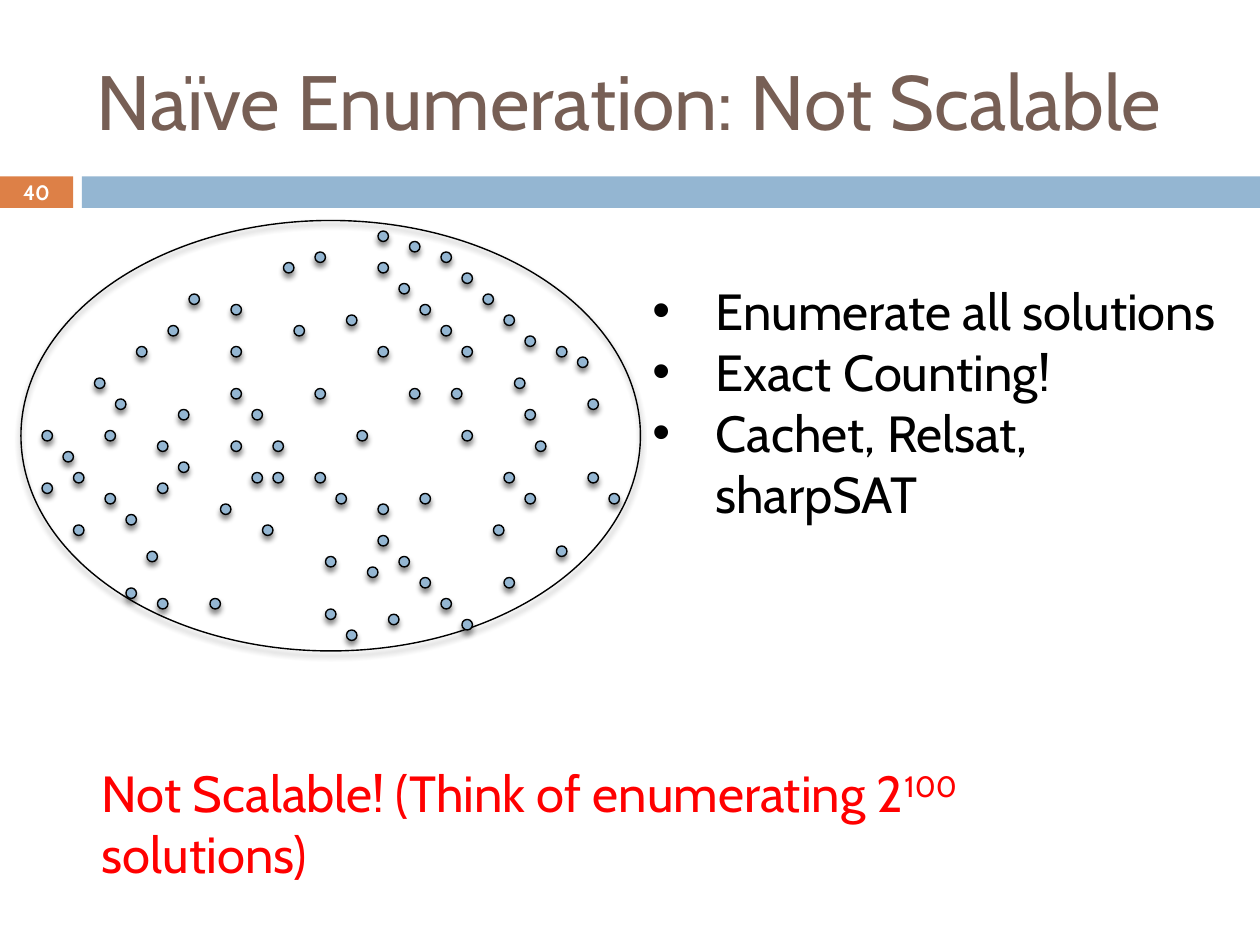
"""Build the slide on why naïve enumeration of solutions does not scale."""
from dataclasses import dataclass

from lxml.etree import SubElement
from pptx import Presentation
from pptx.dml.color import RGBColor
from pptx.enum.shapes import MSO_SHAPE
from pptx.enum.text import MSO_ANCHOR, MSO_AUTO_SIZE, PP_ALIGN
from pptx.oxml.ns import qn
from pptx.util import Inches, Pt

TITLE = "Naïve Enumeration: Not Scalable"
PAGE_NUMBER = "40"
POINTS = ["Enumerate all solutions", "Exact Counting!", "Cachet, Relsat, sharpSAT"]
WARNING = [("Not Scalable! (Think of enumerating 2", False), ("100", True), (" solutions)", False)]

SOLUTION_COLUMNS_BY_ROW = {
    22: [36], 23: [39], 24: [30, 42], 25: [27, 36], 26: [44], 27: [38],
    28: [18, 46], 29: [22, 40], 30: [33, 48], 31: [16, 28, 42], 32: [50],
    33: [13, 22, 36, 44, 53], 34: [55], 36: [9, 49], 37: [22, 30, 39, 43],
    38: [11, 56], 39: [17, 24, 50], 41: [4, 10, 34, 44], 42: [15, 22, 26, 51],
    43: [6], 44: [17], 45: [7, 24, 26, 30, 48, 56], 46: [4, 15],
    47: [10, 32, 40, 50, 58], 48: [21, 36], 49: [12], 50: [7, 25, 47],
    51: [36], 52: [53], 52.5: [14], 53: [31, 38], 54: [35], 55: [40, 48],
    56: [12], 57: [15, 20, 42], 58: [31], 58.5: [37], 59: [44], 60: [33],
}

SLIDE_WIDTH, SLIDE_HEIGHT = 10, 7.5
CELL = 1 / 12
BAR_TOP, BAR_HEIGHT = 1.4, 0.25
BADGE_WIDTH, BAR_LEFT = 0.58, 0.65


@dataclass(frozen=True)
class Theme:
    font: str = "Cabin"
    title: str = "775F55"
    badge: str = "DD8047"
    blue: str = "94B6D2"
    ink: str = "000000"
    alarm: str = "FF0000"
    light: str = "FFFFFF"
    title_size: float = 44
    body_size: float = 29
    number_size: float = 11.9
    outline: float = 0.79


THEME = Theme()


def add_shape(slide, kind, box, fill=None, outlined=False):
    shape = slide.shapes.add_shape(kind, *map(Inches, box))
    shape.shadow.inherit = False
    if fill:
        shape.fill.solid()
        shape.fill.fore_color.rgb = RGBColor.from_string(fill)
    else:
        shape.fill.background()
    if outlined:
        shape.line.color.rgb = RGBColor.from_string(THEME.ink)
        shape.line.width = Pt(THEME.outline)
    else:
        shape.line.fill.background()
    return shape


def add_shadowed_ellipse(slide, box, fill=None):
    shape = add_shape(slide, MSO_SHAPE.OVAL, box, fill, outlined=True)
    effects = shape.element.spPr.find(qn("a:effectLst"))
    shadow = SubElement(effects, qn("a:outerShdw"), blurRad=str(Pt(3)), dist=str(Pt(2.4)),
                        dir="5400000", rotWithShape="0")
    color = SubElement(shadow, qn("a:srgbClr"), val=THEME.ink)
    SubElement(color, qn("a:alpha"), val="45000")


def add_text(slide, box, paragraphs, size, color, anchor=MSO_ANCHOR.TOP, align=PP_ALIGN.LEFT,
             bold=False, bullets=False, grow=False):
    frame = slide.shapes.add_textbox(*map(Inches, box)).text_frame
    frame.word_wrap = True
    frame.vertical_anchor = anchor
    frame.auto_size = MSO_AUTO_SIZE.SHAPE_TO_FIT_TEXT if grow else MSO_AUTO_SIZE.NONE
    for index, runs in enumerate(paragraphs):
        paragraph = frame.add_paragraph() if index else frame.paragraphs[0]
        paragraph.alignment = align
        paragraph.font.name = THEME.font
        paragraph.font.size = Pt(size)
        paragraph.font.bold = bold
        paragraph.font.color.rgb = RGBColor.from_string(color)
        if bullets:
            add_bullet(paragraph)
        for text, raised in runs:
            run = paragraph.add_run()
            run.text = text
            if raised:
                run.font._element.set("baseline", "30000")


def add_bullet(paragraph):
    properties = paragraph._p.get_or_add_pPr()
    properties.set("marL", str(Inches(0.5)))
    properties.set("indent", str(Inches(-0.5)))
    bullet_font = SubElement(properties, qn("a:buFont"), typeface="Arial")
    bullet = SubElement(properties, qn("a:buChar"), char="•")
    properties.insert(0, bullet_font)
    properties.insert(1, bullet)


def main():
    presentation = Presentation()
    presentation.slide_width = Inches(SLIDE_WIDTH)
    presentation.slide_height = Inches(SLIDE_HEIGHT)
    slide = presentation.slides.add_slide(presentation.slide_layouts[6])

    badge_box = (0, BAR_TOP, BADGE_WIDTH, BAR_HEIGHT)
    add_shape(slide, MSO_SHAPE.RECTANGLE, badge_box, THEME.badge)
    add_shape(slide, MSO_SHAPE.RECTANGLE,
              (BAR_LEFT, BAR_TOP, SLIDE_WIDTH - BAR_LEFT, BAR_HEIGHT), THEME.blue)
    add_text(slide, (0.67, 0.25, 8.92, 1.08), [[(TITLE, False)]],
             THEME.title_size, THEME.title, MSO_ANCHOR.MIDDLE)

    add_shadowed_ellipse(slide, [cells * CELL for cells in (2, 21, 59, 41)])
    for row, columns in SOLUTION_COLUMNS_BY_ROW.items():
        for column in columns:
            add_shadowed_ellipse(slide, (column * CELL, row * CELL, CELL, CELL), THEME.blue)

    add_text(slide, badge_box, [[(PAGE_NUMBER, False)]], THEME.number_size, THEME.light,
             MSO_ANCHOR.MIDDLE, PP_ALIGN.CENTER, bold=True)
    add_text(slide, (0.71, 6, 8.41, 0.59), [WARNING], THEME.body_size, THEME.alarm, grow=True)
    add_text(slide, (5.08, 2.17, 4.75, 2.54), [[(point, False)] for point in POINTS],
             THEME.body_size, THEME.ink, bullets=True, grow=True)
    presentation.save("out.pptx")


if __name__ == "__main__":
    main()
